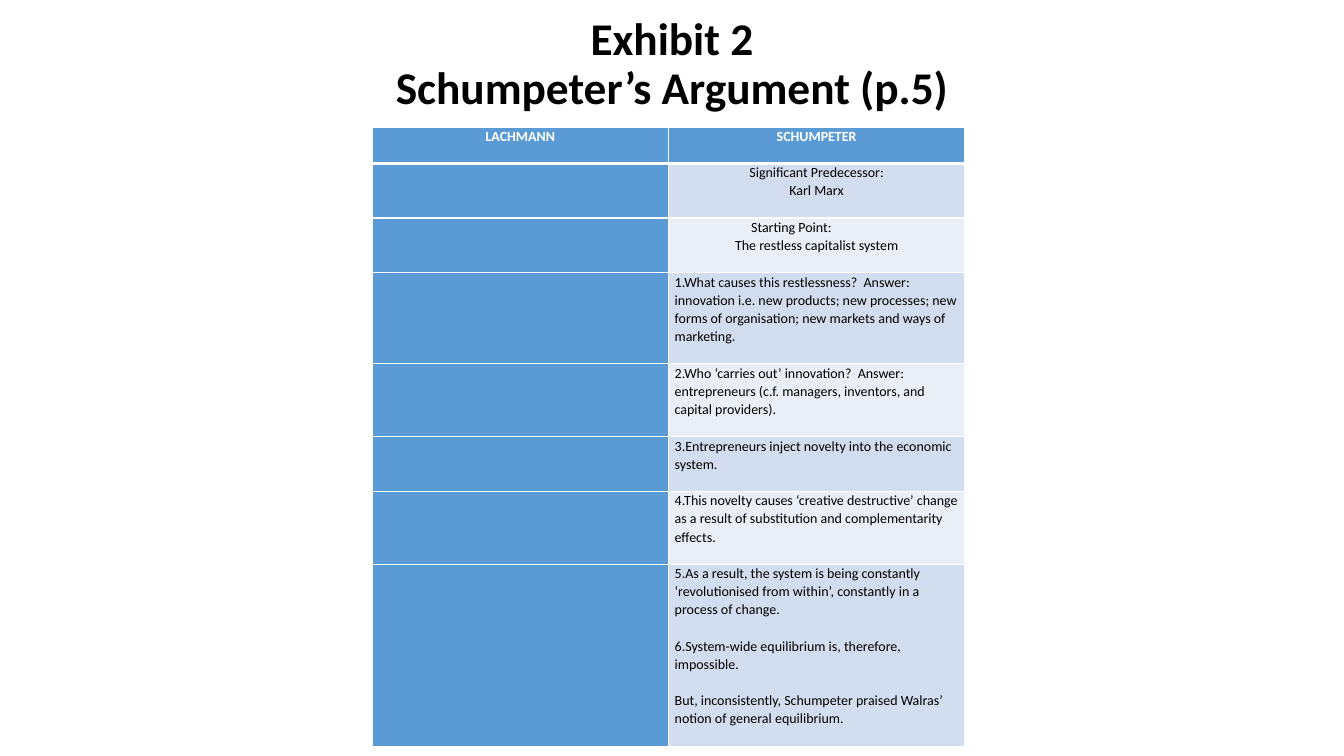
from dataclasses import dataclass

import pptx
import pptx.dml.color
import pptx.enum.text
import pptx.oxml.ns
import pptx.util
from lxml import etree

Pt = pptx.util.Pt
Align = pptx.enum.text.PP_ALIGN
WIDE, HIGH = pptx.util.Inches(13.33), pptx.util.Inches(7.5)
COLS, ROWS = 160, 90  # layout grid over the slide
LINE = 2.17  # grid rows taken by one line of table text


@dataclass(frozen=True)
class Theme:
    font: str = "Calibri"
    ink: str = "000000"
    white: str = "FFFFFF"
    blue: str = "5B9BD5"
    bands: tuple[str, str] = ("D2DEEF", "EAEFF7")
    title: float = 32.4
    body: float = 10
    rule: float = 1
    thick: float = 3


@dataclass(frozen=True)
class Para:
    text: str
    align: Align = Align.LEFT
    indent: float = 0  # grid columns
    gap: float = 0  # points above


@dataclass(frozen=True)
class Step:
    lines: int
    paras: tuple[Para, ...]


THEME = Theme()
MID = Align.CENTER
HEADS = ("LACHMANN", "SCHUMPETER")
STEPS = (
    Step(3, (Para("Significant Predecessor:", MID), Para("Karl Marx", MID))),
    Step(3, (Para("Starting Point:", indent=9.1),
             Para("The restless capitalist system", MID))),
    Step(5, (Para("1.What causes this restlessness?  Answer: innovation i.e. new "
                  "products; new processes; new forms of organisation; new markets "
                  "and ways of marketing."),)),
    Step(4, (Para("2.Who ‘carries out’ innovation?  Answer: entrepreneurs (c.f. "
                  "managers, inventors, and capital providers)."),)),
    Step(3, (Para("3.Entrepreneurs inject novelty into the economic system."),)),
    Step(4, (Para("4.This novelty causes ‘creative destructive’ change as a result "
                  "of substitution and complementarity effects."),)),
    Step(10, (Para("5.As a result, the system is being constantly ‘revolutionised "
                   "from within’, constantly in a process of change."),
              Para("6.System-wide equilibrium is, therefore, impossible.", gap=13),
              Para("But, inconsistently, Schumpeter praised Walras’ notion of "
                   "general equilibrium.", gap=13))),
)


def across(cols: float) -> int:
    return round(WIDE * cols / COLS)


def down(rows: float) -> int:
    return round(HIGH * rows / ROWS)


def write(frame, paras: tuple[Para, ...], *, size: float = THEME.body,
          color: str = THEME.ink, bold: bool = False, pitch: float = 1.07) -> None:
    frame.word_wrap = True
    for i, item in enumerate(paras):
        para = frame.add_paragraph() if i else frame.paragraphs[0]
        para.text = item.text
        para.alignment = item.align
        para.line_spacing = pitch
        para.space_before = Pt(item.gap)
        if item.indent:
            para._p.get_or_add_pPr().set("marL", str(across(item.indent)))
        for run in para.runs:
            font = run.font
            font.name, font.size, font.bold = THEME.font, Pt(size), bold
            font.color.rgb = pptx.dml.color.RGBColor.from_string(color)


def edge(cell, side: str, width: float) -> None:
    """Draw one white border; side is L, R, T or B."""
    qn = pptx.oxml.ns.qn
    line = etree.SubElement(cell._tc.get_or_add_tcPr(), qn(f"a:ln{side}"),
                            w=str(Pt(width)))
    fill = etree.SubElement(line, qn("a:solidFill"))
    etree.SubElement(fill, qn("a:srgbClr"), val=THEME.white)


def dress(cell, row: int, color: str) -> None:
    """Set a cell's margins, borders and fill."""
    cell.margin_left = cell.margin_right = across(0.75)
    cell.margin_top = cell.margin_bottom = 0
    for side in "LRTB":
        heavy = (row, side) in ((0, "B"), (1, "T"))
        edge(cell, side, THEME.thick if heavy else THEME.rule)
    cell.fill.solid()
    cell.fill.fore_color.rgb = pptx.dml.color.RGBColor.from_string(color)


def add_title(slide) -> None:
    box = slide.shapes.add_textbox(across(11), down(1.95), across(138), down(12))
    frame = box.text_frame
    frame.margin_top = frame.margin_bottom = 0
    write(frame, (Para("Exhibit 2\vSchumpeter’s Argument (p.5)", MID),),
          size=THEME.title, bold=True, pitch=0.9)


def add_grid(slide) -> None:
    lines = [2] + [step.lines for step in STEPS]
    table = slide.shapes.add_table(
        len(lines), len(HEADS), across(44.3), down(15.12),
        across(70.56), down(LINE * sum(lines))).table
    table.first_row = table.horz_banding = False
    for row, count in enumerate(lines):
        table.rows[row].height = down(LINE * count)
    for col, head in enumerate(HEADS):
        cell = table.cell(0, col)
        dress(cell, 0, THEME.blue)
        write(cell.text_frame, (Para(head, MID),), color=THEME.white, bold=True)
    for row, step in enumerate(STEPS, 1):
        dress(table.cell(row, 0), row, THEME.blue)
        cell = table.cell(row, 1)
        dress(cell, row, THEME.bands[(row - 1) % 2])
        write(cell.text_frame, step.paras)


def main() -> None:
    deck = pptx.Presentation()
    deck.slide_width, deck.slide_height = WIDE, HIGH
    slide = deck.slides.add_slide(deck.slide_layouts[6])
    add_title(slide)
    add_grid(slide)
    deck.save("out.pptx")


if __name__ == "__main__":
    main()
